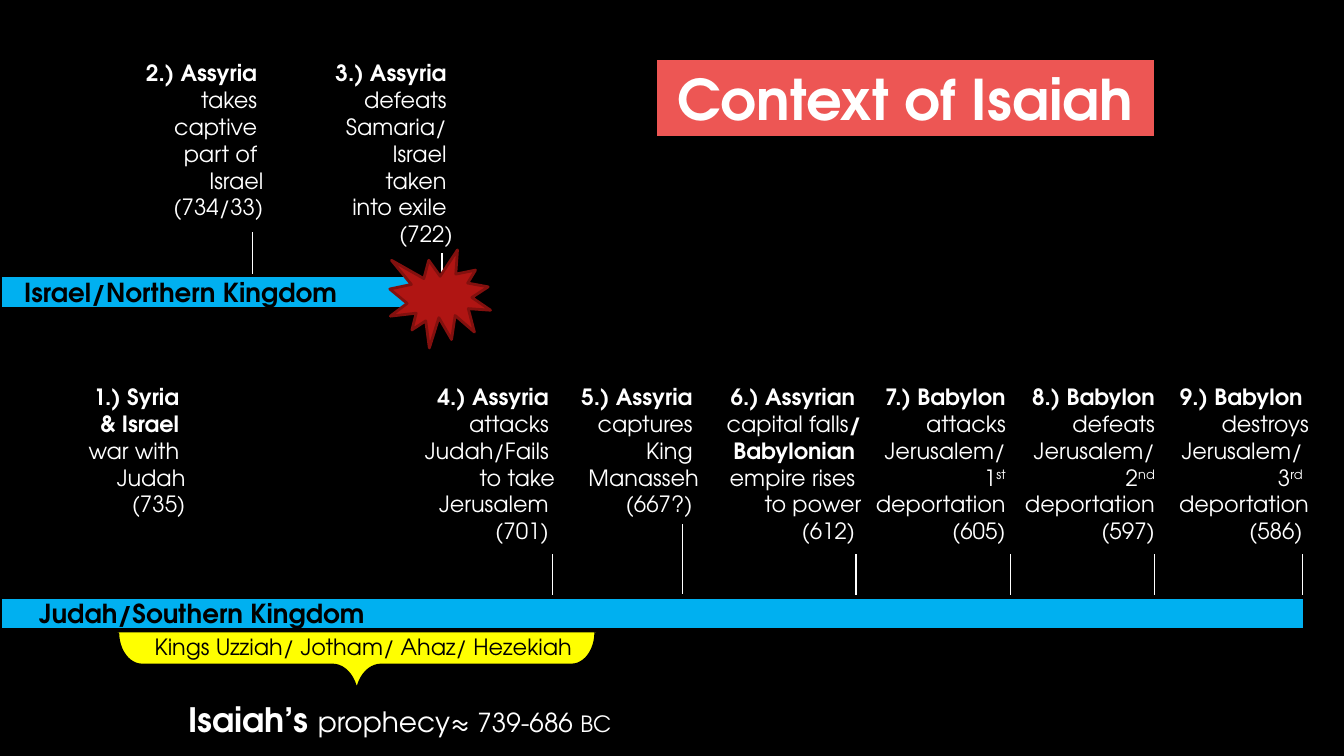
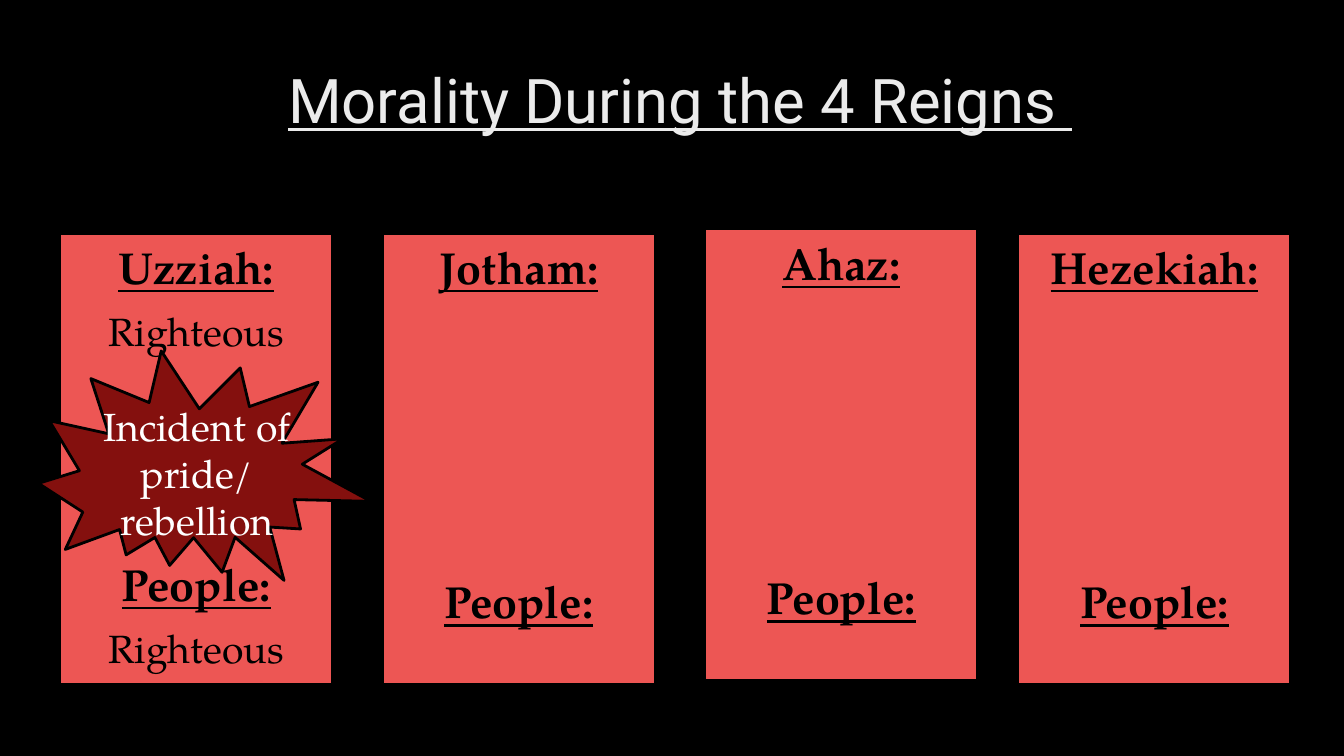
from dataclasses import dataclass

import pptx
import pptx.dml.color
import pptx.enum.shapes
import pptx.enum.text
import pptx.oxml.ns
import pptx.util
from lxml import etree
from pptx.util import Inches

BLACK, WHITE = "000000", "FFFFFF"
CORAL, SKY, YELLOW = "ED5654", "00B0F0", "FFFF00"
SANS, SERIF, TITLE_FONT = "TeX Gyre Adventor", "TeX Gyre Pagella", "Roboto"
SHAPES = pptx.enum.shapes.MSO_SHAPE
ALIGN = pptx.enum.text.PP_ALIGN
ANCHOR = pptx.enum.text.MSO_ANCHOR


@dataclass
class Event:
    """A dated label; its tick runs from tick_top to tick_bottom."""
    left: float
    lines: list
    top: float = 2.81
    width: float = 1.8
    height: float = 1.51
    tick_x: float = None
    tick_top: float = 4.12
    tick_bottom: float = 4.65


def deportation(left, number, verb, ordinal, suffix, ending, year, tick_x):
    return Event(left, [f"{number}.) Babylon ", verb, "Jerusalem/ ",
                        [(ordinal, {}), (suffix, {"raised": True}), (" ", {})],
                        ending, f"({year}) "], tick_x=tick_x)


EVENTS = [
    Event(-0.43, ["1.) Syria ", [("& Israel ", {"bold": True})], "war with ",
                  "Judah", "(735)"], width=1.88, height=1.31),
    Event(0.15, ["2.) Assyria ", "takes ", "captive ", "part of ", "Israel",
                 "(734/33)"],
          top=0.4, width=1.88, tick_x=1.88, tick_top=1.73, tick_bottom=2.17),
    Event(1.64, ["3.) Assyria ", "defeats ", "Samaria/ ", "Israel ", "taken ",
                 "into exile ", "(722)"],
          top=0.4, height=1.72, tick_x=3.29, tick_top=1.88, tick_bottom=2.25),
    Event(2.4, ["4.) Assyria ", "attacks ", "Judah/Fails ", "to take",
                "Jerusalem ", "(701) "], tick_x=4.11),
    Event(3.47, ["5.) Assyria ", "captures ", "King ", "Manasseh", "(667?) "],
          height=1.31, tick_x=5.08, tick_top=3.9, tick_bottom=4.42),
    Event(4.68, ["6.) Assyrian ",
                 [("capital falls", {}), ("/ Babylonian ", {"bold": True})],
                 "empire rises ", "to power", "(612) "], tick_x=6.37),
    deportation(5.8, 7, "attacks ", "1", "st", "deportation ", 605, 7.52),
    deportation(6.91, 8, "defeats ", "2", "nd", "deportation ", 597, 8.59),
    deportation(8.01, 9, "destroys", "3", "rd", "deportation", 586, 9.69),
]


def color(hex_value):
    return pptx.dml.color.RGBColor.from_string(hex_value)


def add_slide(deck):
    slide = deck.slides.add_slide(deck.slide_layouts[6])
    slide.background.fill.solid()
    slide.background.fill.fore_color.rgb = color(BLACK)
    return slide


def prepare_frame(shape, inset=0.07, anchor=ANCHOR.TOP):
    frame = shape.text_frame
    frame.word_wrap = True
    frame.margin_left, frame.margin_right = Inches(inset), Inches(0.07)
    frame.margin_top = frame.margin_bottom = Inches(0.04)
    frame.vertical_anchor = anchor
    return frame


def add_text_frame(slide, left, top, width, height):
    box = slide.shapes.add_textbox(Inches(left), Inches(top),
                                   Inches(width), Inches(height))
    return prepare_frame(box)


def add_filled(slide, kind, left, top, width, height, fill,
               line=BLACK, weight=0.75, rotation=0):
    shape = slide.shapes.add_shape(kind, Inches(left), Inches(top),
                                   Inches(width), Inches(height))
    shape.shadow.inherit = False
    shape.fill.solid()
    shape.fill.fore_color.rgb = color(fill)
    shape.line.color.rgb = color(line)
    shape.line.width = pptx.util.Pt(weight)
    shape.rotation = rotation
    return shape


def write(frame, content, size, ink, face, align=ALIGN.LEFT, bold=False,
          underline=False, before=0):
    """Add a paragraph: plain text, or (text, options) runs that differ."""
    paragraph = frame.paragraphs[0]
    if paragraph.runs:
        paragraph = frame.add_paragraph()
    paragraph.alignment = align
    if before:
        paragraph.space_before = pptx.util.Pt(before)
    font = paragraph.font
    font.name, font.size = face, pptx.util.Pt(size)
    font.bold, font.underline = bold, underline
    font.color.rgb = color(ink)
    runs = [(content, {})] if isinstance(content, str) else content
    for text, options in runs:
        run = paragraph.add_run()
        run.text = text
        if "bold" in options:
            run.font.bold = options["bold"]
        if "size" in options:
            run.font.size = pptx.util.Pt(options["size"])
        if options.get("raised"):
            run.font._element.set("baseline", "30000")


def add_tick(slide, x, top, bottom):
    tick = slide.shapes.add_connector(
        pptx.enum.shapes.MSO_CONNECTOR.STRAIGHT,
        Inches(x), Inches(bottom), Inches(x), Inches(top))
    tick.line.color.rgb = color(WHITE)
    tick.line.width = pptx.util.Pt(0.75)
    etree.SubElement(tick._element.spPr, pptx.oxml.ns.qn("a:effectLst"))


def add_event(slide, event):
    if event.tick_x is not None:
        add_tick(slide, event.tick_x, event.tick_top, event.tick_bottom)
    frame = add_text_frame(slide, event.left, event.top,
                           event.width, event.height)
    for index, line in enumerate(event.lines):
        write(frame, line, 12, WHITE, SANS, ALIGN.RIGHT, bold=index == 0)


def add_kingdom(slide, name, top, width, inset):
    bar = add_filled(slide, SHAPES.RECTANGLE, 0, top, width, 0.25, SKY,
                     weight=2)
    write(prepare_frame(bar, inset, ANCHOR.MIDDLE), name, 14, BLACK, SANS,
          bold=True)


def add_reign(slide, king, left, top=1.74, verdict=None):
    card = add_filled(slide, SHAPES.RECTANGLE, left, top, 2.02, 3.35, CORAL)
    frame = prepare_frame(card)
    people_gap = 108.5 if verdict else 150.5
    for heading, gap in ((king + ":", 0), ("People:", people_gap)):
        write(frame, heading, 24, BLACK, SERIF, ALIGN.CENTER, bold=True,
              underline=True, before=gap)
        if verdict:
            write(frame, verdict, 21, BLACK, SERIF, ALIGN.CENTER, before=7.5)


def build_context(deck):
    slide = add_slide(deck)
    for event in EVENTS:
        add_event(slide, event)
    add_kingdom(slide, "Judah/Southern Kingdom", 4.44, 9.71, 0.29)
    add_kingdom(slide, "Israel/Northern Kingdom", 2.05, 3.3, 0.18)

    prophecy = add_text_frame(slide, 1.33, 5.16, 3.71, 0.38)
    write(prophecy, [("Isaiah’s ", {"size": 18, "bold": True}),
                     ("prophecy", {"size": 15}), ("≈ 739-686 ", {}),
                     ("BC", {"size": 12})], 14, WHITE, SANS)

    banner = add_filled(slide, SHAPES.RECTANGLE, 4.88, 0.44, 3.71, 0.58, CORAL)
    write(prepare_frame(banner), "Context of Isaiah", 30, WHITE, SANS,
          ALIGN.CENTER, bold=True)

    reigns_brace = add_filled(slide, SHAPES.LEFT_BRACE, 2.41, 3.17, 0.49, 3.56,
                              YELLOW, weight=1.75, rotation=270)
    reigns_brace.adjustments[0] = 0.37
    reigns_brace.adjustments[1] = 0.5
    kings = add_text_frame(slide, 1.08, 4.67, 4.19, 0.29)
    write(kings, "Kings Uzziah/ Jotham/ Ahaz/ Hezekiah", 12, BLACK, SANS)
    add_filled(slide, SHAPES.EXPLOSION1, 2.9, 1.86, 0.75, 0.73, "B01513",
               line="82100E", weight=1.5)


def build_morality(deck):
    slide = add_slide(deck)
    title = add_text_frame(slide, 1.09, 0.42, 7.94, 1.15)
    write(title, "Morality During the 4 Reigns ", 33, "EBEBEB", TITLE_FONT,
          ALIGN.CENTER, underline=True)
    add_reign(slide, "Uzziah", 0.45, verdict="Righteous")
    add_reign(slide, "Jotham", 2.85)
    add_reign(slide, "Ahaz", 5.25, top=1.71)
    add_reign(slide, "Hezekiah", 7.58)
    add_filled(slide, SHAPES.EXPLOSION2, 0.32, 2.53, 2.4, 1.97, "84100E",
               weight=1.5, rotation=27.4)
    incident = add_text_frame(slide, 0.57, 2.95, 1.79, 1.14)
    write(incident, "Incident of pride/ rebellion", 21, WHITE, SERIF,
          ALIGN.CENTER)


def main():
    deck = pptx.Presentation()
    deck.slide_width = Inches(10)
    deck.slide_height = deck.slide_width * 9 // 16
    build_context(deck)
    build_morality(deck)
    deck.save("out.pptx")


if __name__ == "__main__":
    main()
